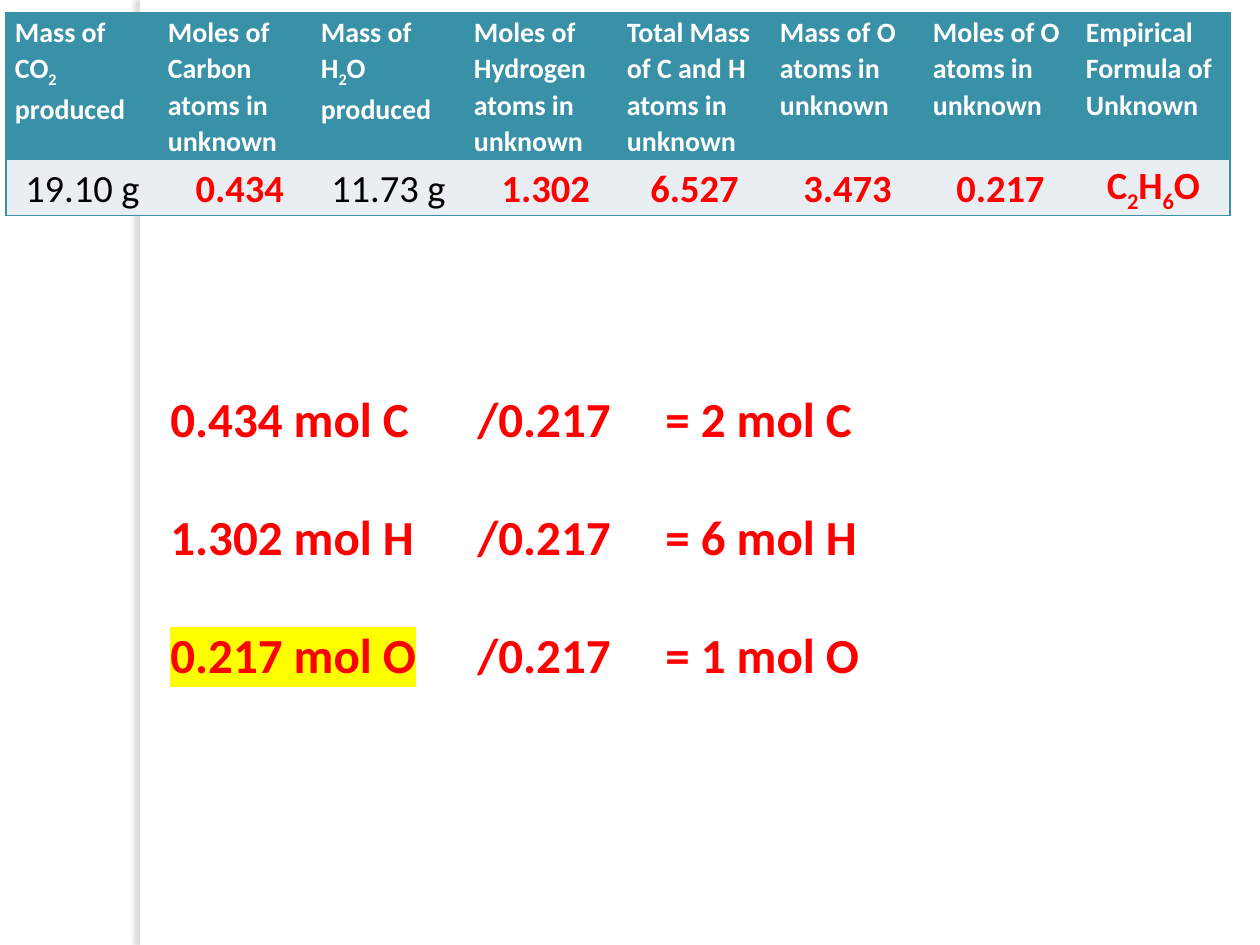
from dataclasses import dataclass
from lxml.etree import SubElement
from pptx import Presentation
from pptx.dml.color import RGBColor as Rgb
from pptx.enum.shapes import MSO_SHAPE as Shape
from pptx.enum.text import MSO_ANCHOR as Anchor, MSO_AUTO_SIZE as AutoSize, PP_ALIGN as Align
from pptx.oxml.ns import qn
from pptx.util import Pt


@dataclass(frozen=True)
class Theme:
    font: str = "Calibri"
    teal: str = "3891A7"
    pale: str = "E8EEF1"
    white: str = "FFFFFF"
    black: str = "000000"
    red: str = "FF0000"
    yellow: str = "FFFF00"
    shade: str = "736F63"
    header_size: int = 16
    value_size: int = 22
    work_size: int = 28


theme = Theme()
SCALE = 914400 / 126
NO_GRID_STYLE = "{2D5ABB26-0587-4C30-8999-92F81FD0307C}"


def px(*lengths):
    return [round(length * SCALE) for length in lengths]


def add_span(para, text, size, color, bold=True):
    span = para.add_run()
    span.text = text
    span.font.name = theme.font
    span.font.size = Pt(size)
    span.font.bold = bold
    span.font.color.rgb = Rgb.from_string(color)
    return span


deck = Presentation()
deck.slide_width, deck.slide_height = px(1260, 945)
page = deck.slides.add_slide(deck.slide_layouts[6])

strip = page.shapes.add_shape(Shape.RECTANGLE, *px(140, 0, 10, 945))
strip.fill.solid()
strip.fill.fore_color.rgb = Rgb.from_string(theme.white)
strip.line.fill.background()
strip.shadow.inherit = False
effects = strip._element.spPr.find(qn("a:effectLst"))
shadow = SubElement(effects, qn("a:outerShdw"), blurRad=str(Pt(3)), dist=str(Pt(3)), dir="10800000")
shade = SubElement(shadow, qn("a:srgbClr"), val=theme.shade)
SubElement(shade, qn("a:alpha"), val="25000")

headers = [
    "Mass of CO_2 _produced",
    "Moles of Carbon atoms in unknown",
    "Mass of H_2_O produced",
    "Moles of Hydrogen atoms in unknown",
    "Total Mass of C and H atoms in unknown",
    "Mass of O atoms in unknown",
    "Moles of O atoms in unknown",
    "Empirical Formula of Unknown",
]
values = ["19.10 g", " 0.434", "11.73 g", " 1.302", "6.527", "3.473", "0.217", "C_2_H_6_O"]
given_columns = (0, 2)

frame = page.shapes.add_table(2, len(headers), *px(6, 13, 1224, 232))
grid = frame.table
next(frame._element.iter(qn("a:tableStyleId"))).text = NO_GRID_STYLE
for column in grid.columns:
    column.width = px(153)[0]
for row, height in zip(grid.rows, px(115, 54)):
    row.height = height

for row_index, texts in enumerate((headers, values)):
    is_header = row_index == 0
    for column_index, text in enumerate(texts):
        cell = grid.cell(row_index, column_index)
        cell.margin_left, cell.margin_right, cell.margin_top, cell.margin_bottom = px(9, 9, 0, 0)
        cell.vertical_anchor = Anchor.TOP if is_header else Anchor.MIDDLE
        sides = {"L": column_index == 0, "R": column_index == len(texts) - 1, "T": True, "B": True}
        for side, shown in sides.items():
            if shown:
                border = SubElement(cell._tc.get_or_add_tcPr(), qn(f"a:ln{side}"), w=str(Pt(1)))
                paint = SubElement(border, qn("a:solidFill"))
                SubElement(paint, qn("a:srgbClr"), val=theme.teal)
        cell.fill.solid()
        cell.fill.fore_color.rgb = Rgb.from_string(theme.teal if is_header else theme.pale)
        para = cell.text_frame.paragraphs[0]
        para.alignment = Align.LEFT if is_header else Align.CENTER
        para.line_spacing = 1.07
        given = not is_header and column_index in given_columns
        color = theme.white if is_header else theme.black if given else theme.red
        size = theme.header_size if is_header else theme.value_size
        for part_index, part in enumerate(text.split("_")):
            span = add_span(para, part, size, color, not given)
            if part_index % 2:
                span.font._element.set("baseline", "-25000")

work_columns = [
    (158, 309, ["0.434 mol C", "1.302 mol H", "0.217 mol O"]),
    (465, 165, ["/0.217", "/0.217", "/0.217"]),
    (653, 309, ["= 2 mol C", "= 6 mol H", "= 1 mol O"]),
]
for left, width, lines in work_columns:
    box = page.shapes.add_textbox(*px(left, 382, width, 310))
    box.text_frame.word_wrap = True
    box.text_frame.auto_size = AutoSize.SHAPE_TO_FIT_TEXT
    for line_index, line in enumerate(lines):
        para = box.text_frame.paragraphs[0] if line_index == 0 else box.text_frame.add_paragraph()
        para.space_before = Pt(34 if line_index else 0)
        span = add_span(para, line, theme.work_size, theme.red)
        if line == "0.217 mol O":
            highlight = SubElement(span.font._element, qn("a:highlight"))
            SubElement(highlight, qn("a:srgbClr"), val=theme.yellow)
            span.font._element.find(qn("a:solidFill")).addnext(highlight)

deck.save("out.pptx")
